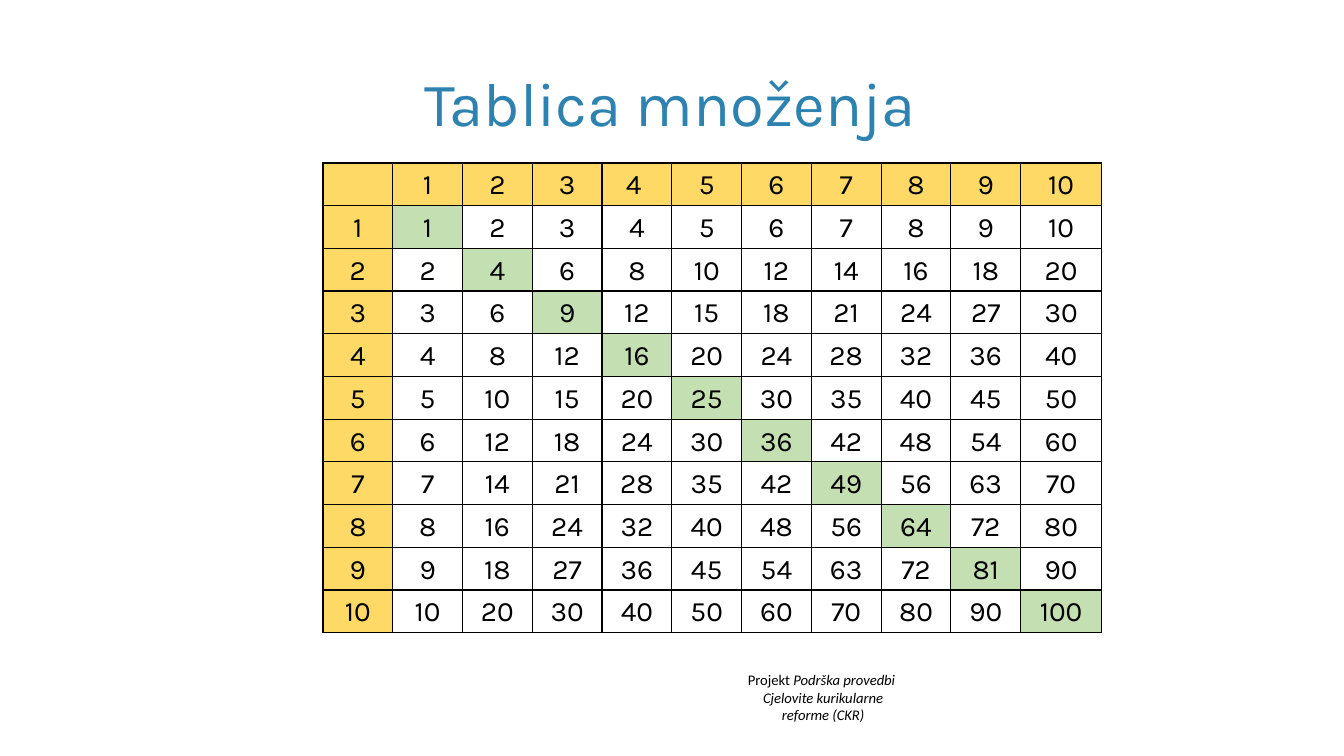
"""Build a slide with the multiplication table from 1 to 10."""
from lxml.etree import SubElement
from pptx import Presentation
from pptx.dml.color import RGBColor
from pptx.enum.text import MSO_ANCHOR, PP_ALIGN
from pptx.oxml.ns import qn
from pptx.util import Inches, Pt

TITLE = "Tablica množenja "
PROJECT = [
    [("Projekt ", False), ("Podrška provedbi", True)],
    [(" Cjelovite kurikularne", True), ("\n", True), (" reforme (CKR)", True)],
]
FACTORS = range(1, 11)
HEADER = ["", *(f"{n}\u00a0" if n == 4 else str(n) for n in FACTORS)]
ROWS = [HEADER] + [[str(n), *(str(n * m) for m in FACTORS)] for n in FACTORS]

BLACK = RGBColor(0x00, 0x00, 0x00)
BLUE = RGBColor(0x2E, 0x82, 0xAF)
YELLOW = RGBColor(0xFF, 0xD9, 0x66)
GREEN = RGBColor(0xC4, 0xE0, 0xB2)

SLIDE_SIZE = (1344, 756)
TITLE_BOX = (98, 33, 1159, 146)
TABLE_BOX = (323, 163, 779, 470)
PROJECT_BOX = (705, 666, 233, 64)
LAST_COLUMN = 81
CELL_MARGIN = 7


def px(length):
    return round(length * Inches(1) / 100.8)


def add_run(paragraph, text, font_name, size, color, italic=False):
    run = paragraph.add_run()
    run.text = text
    run.font.name = font_name
    run.font.size = Pt(size)
    run.font.italic = italic
    run.font.color.rgb = color


def add_text_frame(slide, box):
    frame = slide.shapes.add_textbox(*map(px, box)).text_frame
    frame.word_wrap = True
    return frame


def add_borders(cell):
    properties = cell._tc.get_or_add_tcPr()
    for index, side in enumerate(("lnL", "lnR", "lnT", "lnB")):
        line = properties.makeelement(qn(f"a:{side}"), {"w": str(Pt(1))})
        fill = SubElement(line, qn("a:solidFill"))
        SubElement(fill, qn("a:srgbClr"), val=str(BLACK))
        properties.insert(index, line)


def fill_cell(cell, text, row, column):
    cell.margin_left = cell.margin_right = px(CELL_MARGIN)
    cell.margin_top = cell.margin_bottom = 0
    cell.vertical_anchor = MSO_ANCHOR.MIDDLE
    if row == 0 or column == 0:
        cell.fill.solid()
        cell.fill.fore_color.rgb = YELLOW
    elif row == column:
        cell.fill.solid()
        cell.fill.fore_color.rgb = GREEN
    else:
        cell.fill.background()
    add_borders(cell)
    if text:
        paragraph = cell.text_frame.paragraphs[0]
        paragraph.alignment = PP_ALIGN.CENTER
        paragraph.line_spacing = 1.07
        add_run(paragraph, text, "Karla", 20, BLACK)


def add_project(slide):
    frame = add_text_frame(slide, PROJECT_BOX)
    for index, runs in enumerate(PROJECT):
        paragraph = frame.add_paragraph() if index else frame.paragraphs[0]
        paragraph.alignment = PP_ALIGN.CENTER
        for text, italic in runs:
            if text == "\n":
                paragraph.add_line_break()
            else:
                add_run(paragraph, text, "Calibri", 10.5, BLACK, italic)


def add_title(slide):
    frame = add_text_frame(slide, TITLE_BOX)
    frame.vertical_anchor = MSO_ANCHOR.MIDDLE
    paragraph = frame.paragraphs[0]
    paragraph.alignment = PP_ALIGN.CENTER
    paragraph.line_spacing = 0.9
    add_run(paragraph, TITLE, "Karla", 44, BLUE)


def add_multiplication_table(slide):
    count = len(ROWS)
    table = slide.shapes.add_table(count, count, *map(px, TABLE_BOX)).table
    table.first_row = table.horz_banding = False
    width, height = TABLE_BOX[2:]
    for column in table.columns:
        column.width = px((width - LAST_COLUMN) / (count - 1))
    table.columns[count - 1].width = px(LAST_COLUMN)
    for row in table.rows:
        row.height = px(height / count)
    for row, values in enumerate(ROWS):
        for column, text in enumerate(values):
            fill_cell(table.cell(row, column), text, row, column)


def main():
    presentation = Presentation()
    presentation.slide_width, presentation.slide_height = map(px, SLIDE_SIZE)
    slide = presentation.slides.add_slide(presentation.slide_layouts[6])
    add_project(slide)
    add_title(slide)
    add_multiplication_table(slide)
    presentation.save("out.pptx")


if __name__ == "__main__":
    main()
